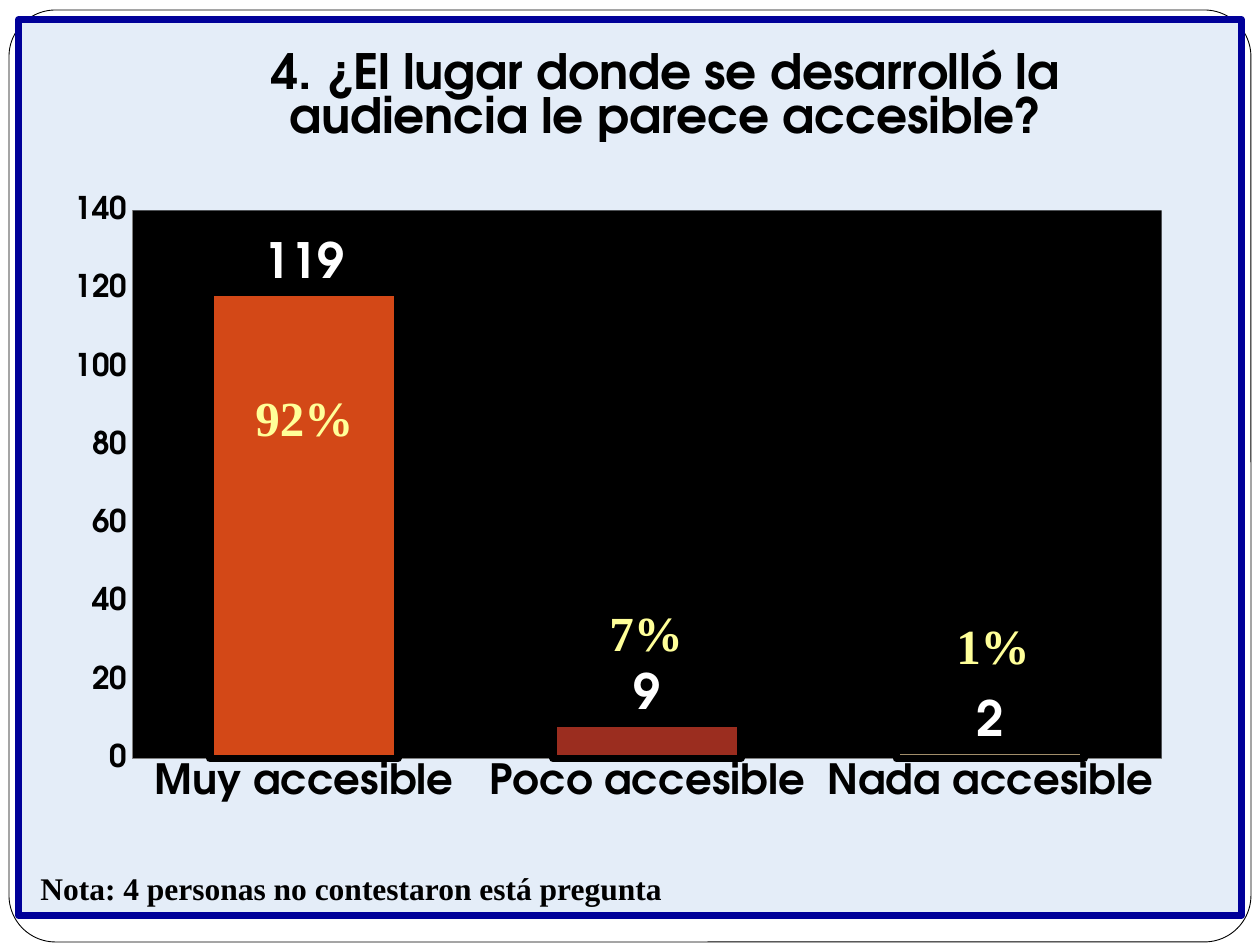
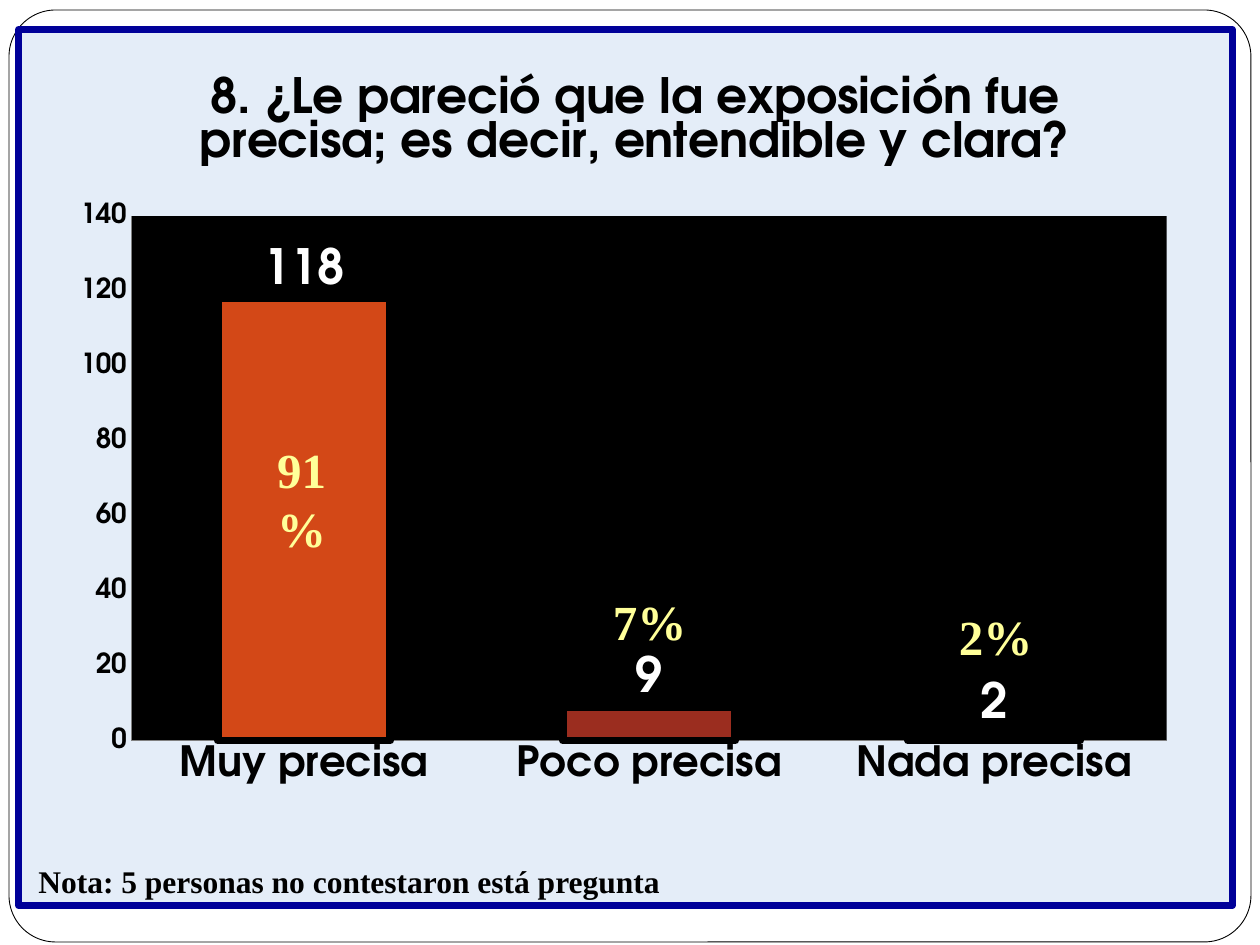
from collections import namedtuple

from pptx import Presentation
from pptx.chart.data import CategoryChartData
from pptx.dml.color import RGBColor
from pptx.enum.chart import XL_CHART_TYPE, XL_LABEL_POSITION, XL_TICK_MARK
from pptx.enum.shapes import MSO_SHAPE
from pptx.enum.text import PP_ALIGN
from pptx.oxml import parse_xml
from pptx.oxml.ns import nsdecls, qn
from pptx.util import Emu, Inches, Pt

PIXELS_PER_INCH = 126
BLACK = RGBColor(0x00, 0x00, 0x00)
WHITE = RGBColor(0xFF, 0xFF, 0xFF)
PALE_BLUE = RGBColor(0xE4, 0xED, 0xF8)
NAVY = RGBColor(0x00, 0x00, 0x99)
GRAY = RGBColor(0x80, 0x80, 0x80)
PALE_YELLOW = RGBColor(0xFF, 0xFF, 0x99)
BAR_COLORS = (
    RGBColor(0xD3, 0x48, 0x17),
    RGBColor(0x9B, 0x2D, 0x1F),
    RGBColor(0xA2, 0x8E, 0x6A),
)
HEADING_FONT = "TeX Gyre Adventor"
BODY_FONT = "Times New Roman"

Box = namedtuple("Box", "left top width height")
Percentage = namedtuple("Percentage", "text box align")
# The plot box and the title corner are relative to the chart box.
Question = namedtuple(
    "Question",
    "title categories values chart_box plot_box title_corner gap_width "
    "value_size percentages note note_box",
)

QUESTIONS = (
    Question(
        title="4. ¿El lugar donde se desarrolló la audiencia le parece accesible?",
        categories=("Muy accesible", "Poco accesible", "Nada accesible"),
        values=(119, 9, 2),
        chart_box=Box(15, 16, 1230, 903),
        plot_box=Box(114, 192, 1036, 553),
        title_corner=(246, 20),
        gap_width=83,
        value_size=18,
        percentages=(
            Percentage("92%", Box(243, 381, 129, 72), PP_ALIGN.LEFT),
            Percentage("7%", Box(591, 596, 110, 72), PP_ALIGN.CENTER),
            Percentage("1%", Box(937, 609, 112, 72), PP_ALIGN.CENTER),
        ),
        note="Nota: 4 personas no contestaron está pregunta",
        note_box=Box(28, 863, 883, 50),
    ),
    Question(
        title="8. ¿Le pareció que la exposición fue precisa; es decir, entendible y clara?",
        categories=("Muy precisa", "Poco precisa", "Nada precisa"),
        values=(118, 9, 2),
        chart_box=Box(15, 26, 1221, 883),
        plot_box=Box(114, 188, 1041, 529),
        title_corner=(173, 34),
        gap_width=100,
        value_size=16,
        percentages=(
            Percentage("91%", Box(243, 433, 117, 72), PP_ALIGN.CENTER),
            Percentage("7%", Box(591, 585, 117, 72), PP_ALIGN.CENTER),
            Percentage("2%", Box(937, 600, 117, 72), PP_ALIGN.CENTER),
        ),
        note="Nota: 5 personas no contestaron está pregunta",
        note_box=Box(26, 856, 883, 50),
    ),
)


def to_emu(box):
    return [Emu(round(length * 914400 / PIXELS_PER_INCH)) for length in box]


def format_font(font, name, size, color, bold=True):
    font.name = name
    font.size = Pt(size)
    font.color.rgb = color
    font.bold = bold


def add_frame(slide):
    frame = slide.shapes.add_shape(
        MSO_SHAPE.ROUNDED_RECTANGLE, *to_emu(Box(9, 10, 1242, 932))
    )
    frame.adjustments[0] = 0.05
    frame.shadow.inherit = False
    frame.fill.solid()
    frame.fill.fore_color.rgb = WHITE
    frame.line.color.rgb = BLACK
    frame.line.width = Pt(0.5)


def add_text(slide, box, text, size, color, align=PP_ALIGN.LEFT):
    text_frame = slide.shapes.add_textbox(*to_emu(box)).text_frame
    text_frame.word_wrap = True
    text_frame.text = text
    paragraph = text_frame.paragraphs[0]
    paragraph.alignment = align
    format_font(paragraph.runs[0].font, BODY_FONT, size, color)


def set_layout(element, position, fractions, inner=False):
    """Place a chart part by fractions (x, y, w, h) of the chart."""
    for layout in element.findall(qn("c:layout")):
        element.remove(layout)
    parts = zip("xywh", fractions)
    pairs = [(name, value) for name, value in parts]
    target = '<c:layoutTarget val="inner"/>' if inner else ""
    modes = "".join(f'<c:{name}Mode val="edge"/>' for name, _ in pairs[:2])
    values = "".join(f'<c:{name} val="{value:.3f}"/>' for name, value in pairs)
    element.insert(position, parse_xml(
        f'<c:layout {nsdecls("c")}><c:manualLayout>{target}{modes}{values}'
        "</c:manualLayout></c:layout>"
    ))


def area_properties(fill, line=""):
    return parse_xml(
        f'<c:spPr {nsdecls("c", "a")}><a:solidFill><a:srgbClr val="{fill}"/>'
        f"</a:solidFill>{line}</c:spPr>"
    )


def format_areas(chart, question):
    """Fill and place the chart area, the plot area and the title."""
    _, _, width, height = question.chart_box
    border = (
        f'<a:ln w="{Pt(4.25)}"><a:solidFill><a:srgbClr val="{NAVY}"/>'
        "</a:solidFill></a:ln>"
    )
    chart_element = chart.element.find(qn("c:chart"))
    chart_element.addnext(area_properties(PALE_BLUE, border))

    plot_area = chart_element.find(qn("c:plotArea"))
    plot_area.append(area_properties(BLACK))
    sizes = (width, height, width, height)
    fractions = [part / whole for part, whole in zip(question.plot_box, sizes)]
    set_layout(plot_area, 0, fractions, inner=True)

    title_x, title_y = question.title_corner
    set_layout(chart.chart_title.element, 1, (title_x / width, title_y / height))


def format_axes(chart, value_size):
    for axis, size in ((chart.category_axis, 24), (chart.value_axis, value_size)):
        axis.has_major_gridlines = False
        axis.major_tick_mark = XL_TICK_MARK.NONE
        axis.minor_tick_mark = XL_TICK_MARK.NONE
        axis.format.line.color.rgb = GRAY
        format_font(axis.tick_labels.font, HEADING_FONT, size, BLACK)
    chart.value_axis.minimum_scale = 0
    chart.value_axis.maximum_scale = 140
    chart.value_axis.major_unit = 20


def format_bars(plot, gap_width):
    plot.gap_width = gap_width
    plot.vary_by_categories = False
    series = plot.series[0]
    series.invert_if_negative = False
    bars = [series.points[index] for index in range(len(BAR_COLORS))]
    for bar, color in zip(bars, BAR_COLORS):
        bar.format.fill.solid()
        bar.format.fill.fore_color.rgb = color
    for outlined in (series, *bars):
        outlined.format.line.color.rgb = BLACK
        outlined.format.line.width = Pt(4.5)

    plot.has_data_labels = True
    labels = plot.data_labels
    labels.show_value = True
    labels.position = XL_LABEL_POSITION.OUTSIDE_END
    format_font(labels.font, HEADING_FONT, 28, WHITE)


def add_answer_chart(slide, question):
    chart_data = CategoryChartData()
    chart_data.categories = question.categories
    chart_data.add_series("Series 1", question.values)
    chart = slide.shapes.add_chart(
        XL_CHART_TYPE.COLUMN_CLUSTERED, *to_emu(question.chart_box), chart_data
    ).chart
    chart.has_legend = False
    format_font(chart.font, BODY_FONT, 10, BLACK, bold=False)
    chart.has_title = True
    title_frame = chart.chart_title.text_frame
    title_frame.text = question.title
    format_font(title_frame.paragraphs[0].runs[0].font, HEADING_FONT, 28, BLACK)
    format_axes(chart, question.value_size)
    format_bars(chart.plots[0], question.gap_width)
    format_areas(chart, question)


def add_question_slide(presentation, question):
    slide = presentation.slides.add_slide(presentation.slide_layouts[6])
    add_frame(slide)
    add_answer_chart(slide, question)
    add_text(slide, question.note_box, question.note, 18, BLACK)
    for text, box, align in question.percentages:
        add_text(slide, box, text, 28, PALE_YELLOW, align)


def main():
    presentation = Presentation()
    presentation.slide_width = Inches(10)
    presentation.slide_height = Inches(7.5)
    for question in QUESTIONS:
        add_question_slide(presentation, question)
    presentation.save("out.pptx")


if __name__ == "__main__":
    main()
